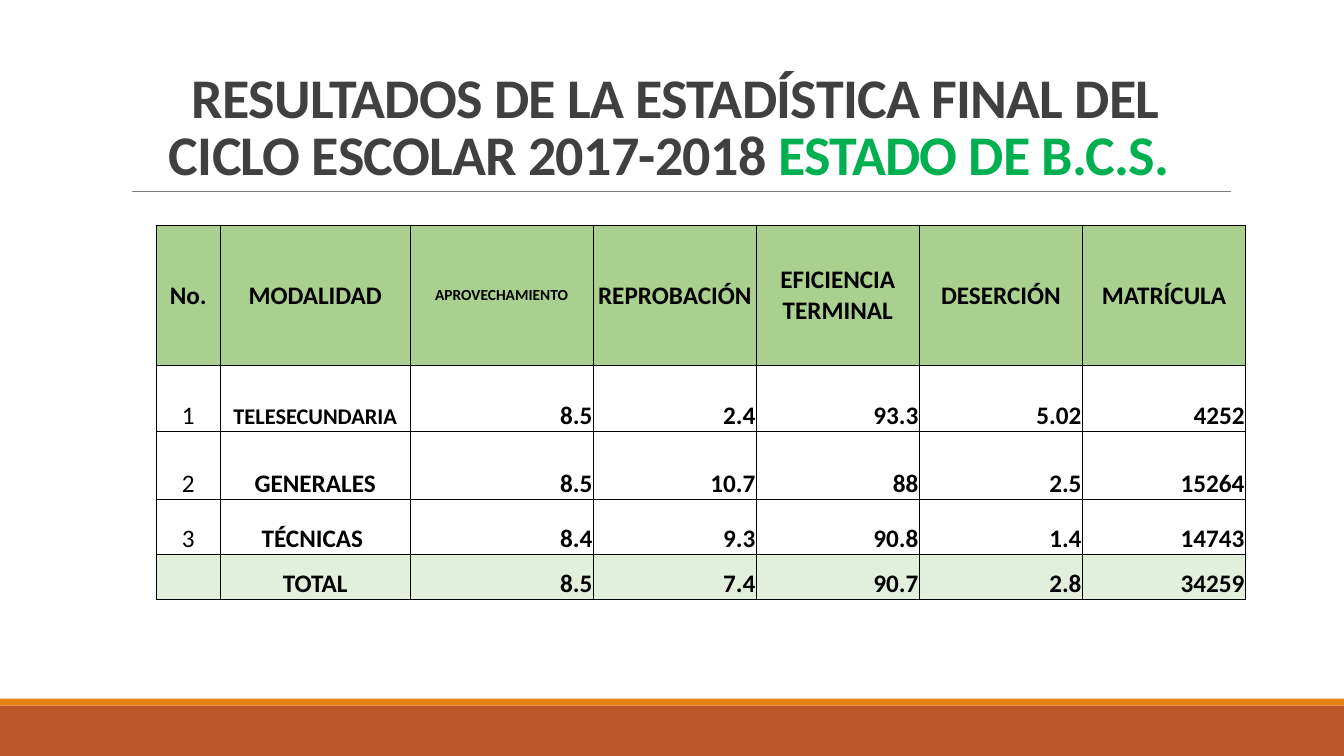
"""Build the slide with the final 2017-2018 school statistics table."""
from dataclasses import dataclass

from lxml import etree
from pptx import Presentation
from pptx.dml.color import RGBColor
from pptx.enum import shapes, text
from pptx.oxml import ns
from pptx.util import Pt


@dataclass(frozen=True)
class Theme:
    font: str = "Calibri"
    heading: str = "404040"
    accent: str = "00B050"
    ink: str = "000000"
    rule: str = "808080"
    band: str = "BD582C"
    stripe: str = "E48312"
    header_fill: str = "A9D08E"
    body_fill: str = "FFFFFF"
    total_fill: str = "E2EFDA"
    title_size: float = 40
    table_size: float = 18
    label_size: float = 16
    small_size: float = 11


theme = Theme()


def add_run(paragraph, wording, size, color, bold=True):
    run = paragraph.add_run()
    run.text = wording
    run.font.name = theme.font
    run.font.size = Pt(size)
    run.font.bold = bold
    run.font.color.rgb = RGBColor.from_string(color)
    return run


def add_borders(cell):
    properties = cell._tc.get_or_add_tcPr()
    for side in ("a:lnL", "a:lnR", "a:lnT", "a:lnB"):
        border = etree.SubElement(properties, ns.qn(side), w=str(Pt(0.5)))
        fill = etree.SubElement(border, ns.qn("a:solidFill"))
        etree.SubElement(fill, ns.qn("a:srgbClr"), val=theme.ink)


deck = Presentation()
deck.slide_width, deck.slide_height = Pt(960), Pt(540)
slide = deck.slides.add_slide(deck.slide_layouts[6])

for top, height, color in ((504, 36, theme.band), (499, 5, theme.stripe)):
    footer = slide.shapes.add_shape(
        shapes.MSO_SHAPE.RECTANGLE, 0, Pt(top), Pt(960), Pt(height))
    footer.shadow.inherit = False
    footer.fill.solid()
    footer.fill.fore_color.rgb = RGBColor.from_string(color)
    footer.line.fill.background()

title_rule = slide.shapes.add_connector(
    shapes.MSO_CONNECTOR.STRAIGHT, Pt(94.3), Pt(136.8), Pt(879.1), Pt(136.8))
title_rule.line.color.rgb = RGBColor.from_string(theme.rule)
title_rule.line.width = Pt(0.5)
etree.SubElement(title_rule._element.spPr, ns.qn("a:effectLst"))

title = slide.shapes.add_textbox(Pt(86.4), Pt(22.3), Pt(792), Pt(114.5)).text_frame
title.word_wrap = True
title.vertical_anchor = text.MSO_ANCHOR.BOTTOM
heading = title.paragraphs[0]
heading.alignment = text.PP_ALIGN.CENTER
heading.line_spacing = 0.85
for wording, color in (
    ("RESULTADOS DE LA ESTADÍSTICA FINAL DEL CICLO ESCOLAR 2017-2018 ", theme.heading),
    ("ESTADO DE B.C.S. ", theme.accent),
):
    run = add_run(heading, wording, theme.title_size, color)
    run.font._element.set("spc", "-50")

records = [
    ["No.", "MODALIDAD", "APROVECHAMIENTO", "REPROBACIÓN",
     "EFICIENCIA TERMINAL", "DESERCIÓN", "MATRÍCULA"],
    ["1", "TELESECUNDARIA", "8.5", "2.4", "93.3", "5.02", "4252"],
    ["2", "GENERALES", "8.5", "10.7", "88", "2.5", "15264"],
    ["3", "TÉCNICAS ", "8.4", "9.3", "90.8", "1.4", "14743"],
    ["", "TOTAL", "8.5", "7.4", "90.7", "2.8", "34259"],
]
column_widths = [45.8, 135.6, 130.8] + [116.5] * 4
row_heights = [100, 47, 48.6, 39.6, 32.4]
row_fills = [theme.header_fill] + [theme.body_fill] * 3 + [theme.total_fill]
special_sizes = {"APROVECHAMIENTO": theme.small_size, "TELESECUNDARIA": theme.label_size}

statistics = slide.shapes.add_table(
    len(records), len(column_widths), Pt(111.6), Pt(160.8),
    Pt(sum(column_widths)), Pt(sum(row_heights))).table
for column, width in zip(statistics.columns, column_widths):
    column.width = Pt(width)

for r, (record, height, fill) in enumerate(zip(records, row_heights, row_fills)):
    statistics.rows[r].height = Pt(height)
    for c, wording in enumerate(record):
        cell = statistics.cell(r, c)
        add_borders(cell)
        cell.fill.solid()
        cell.fill.fore_color.rgb = RGBColor.from_string(fill)
        cell.margin_left = cell.margin_right = cell.margin_top = Pt(0.7)
        cell.margin_bottom = 0
        cell.vertical_anchor = text.MSO_ANCHOR.BOTTOM if r else text.MSO_ANCHOR.MIDDLE
        entry = cell.text_frame.paragraphs[0]
        is_value = r > 0 and c > 1
        entry.alignment = text.PP_ALIGN.RIGHT if is_value else text.PP_ALIGN.CENTER
        if wording:
            size = special_sizes.get(wording, theme.table_size)
            add_run(entry, wording, size, theme.ink, bold=r == 0 or c > 0)

deck.save("out.pptx")
